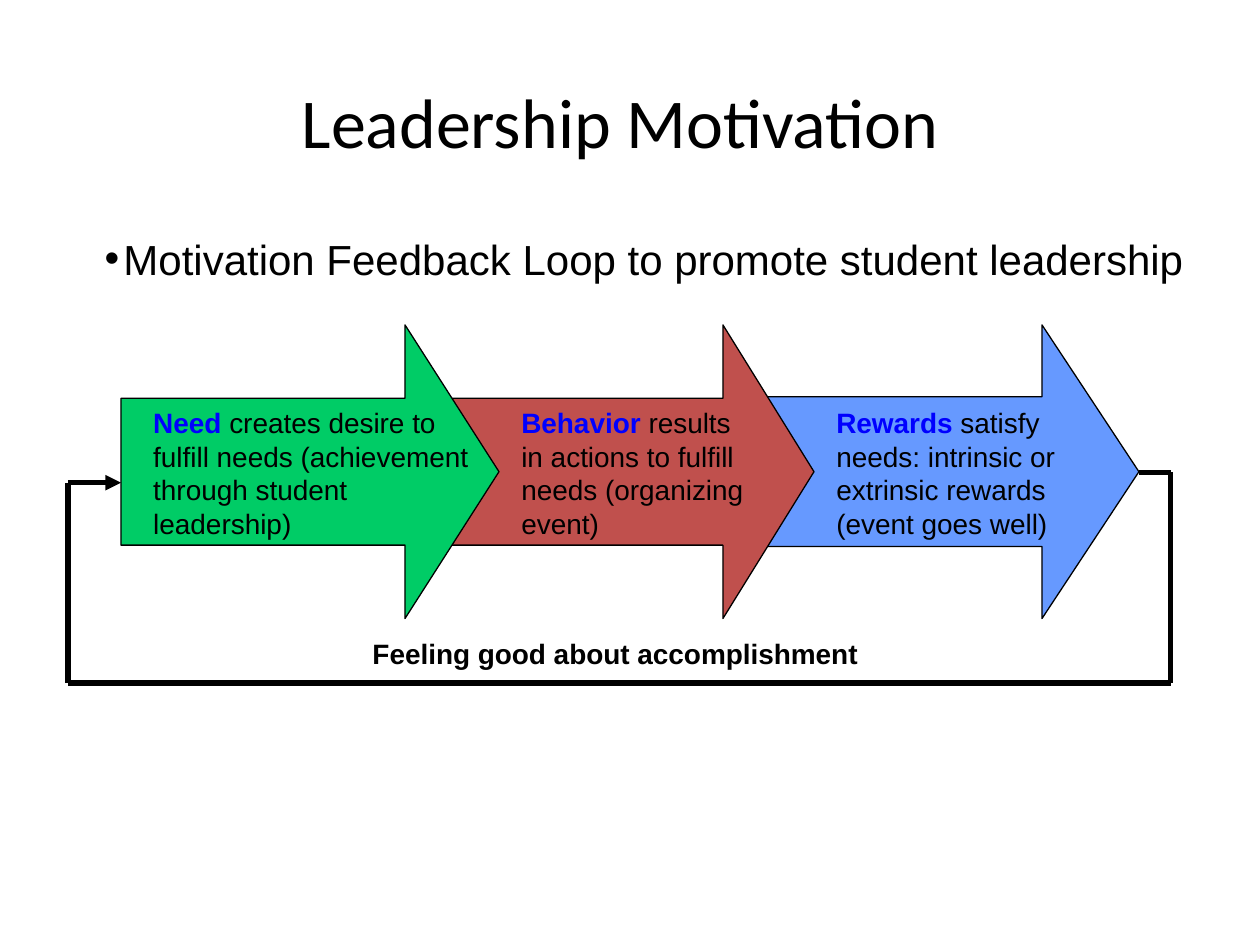
from collections import namedtuple
from lxml.etree import SubElement as Sub
from pptx import Presentation
from pptx.dml.color import RGBColor as RGB
from pptx.enum.shapes import MSO_CONNECTOR as Link, MSO_SHAPE as Shape
from pptx.enum.text import MSO_ANCHOR as Anchor, MSO_AUTO_SIZE as Fit, PP_ALIGN as Align
from pptx.oxml.ns import qn
from pptx.util import Cm, Pt

Theme = namedtuple("Theme", "ink key green red blue head lead body sans title")
theme = Theme("000000", "0000FF", "00CC66", "C0504D", "6699FF", 40, 24, 16, "Arial", "Calibri")

deck = Presentation()
deck.slide_width, deck.slide_height = Cm(25.4), Cm(19.05)
slide = deck.slides.add_slide(deck.slide_layouts[6])
shapes = slide.shapes


def add_box(left, top, width, height, wrap=True):
    frame = shapes.add_textbox(Cm(left), Cm(top), Cm(width), Cm(height)).text_frame
    frame.word_wrap = wrap
    return frame


def add_run(para, text, size, color=theme.ink, bold=False, face=theme.sans):
    run = para.add_run()
    run.text = text
    run.font.name, run.font.size, run.font.bold = face, Pt(size), bold
    run.font.color.rgb = RGB.from_string(color)


frame = add_box(1.27, 4.45, 22.86, 12.57)
frame.margin_top = frame.margin_bottom = Cm(0.25)
para = frame.paragraphs[0]
props = para._p.get_or_add_pPr()
props.set("marL", str(Cm(0.97)))
props.set("indent", str(Cm(-0.38)))
Sub(Sub(props, qn("a:buClr")), qn("a:srgbClr")).set("val", theme.ink)
Sub(props, qn("a:buFont")).set("typeface", theme.sans)
Sub(props, qn("a:buChar")).set("char", "•")
add_run(para, "Motivation Feedback Loop to promote student leadership", theme.lead)

arrows = [
    (15.14, 7.82, 0.51, 0.33, theme.blue),
    (8.99, 7.42, 0.5, 0.31, theme.red),
    (2.44, 7.62, 0.5, 0.32, theme.green),
]
for left, width, shaft, point, color in arrows:
    arrow = shapes.add_shape(Shape.RIGHT_ARROW, Cm(left), Cm(6.55), Cm(width), Cm(5.92))
    arrow.adjustments[0], arrow.adjustments[1] = shaft, point
    arrow.shadow.inherit = False
    arrow.fill.solid()
    arrow.fill.fore_color.rgb = RGB.from_string(color)
    arrow.line.color.rgb = RGB.from_string(theme.ink)
    arrow.line.width = Pt(0.75)

steps = [
    (2.84, 6.98, "Need", " creates desire to fulfill needs (achievement through student leadership)"),
    (10.26, 5.08, "Behavior", " results in actions to fulfill needs (organizing event)"),
    (16.61, 5.08, "Rewards", " satisfy needs: intrinsic or extrinsic rewards (event goes well)"),
]
for left, width, key, rest in steps:
    frame = add_box(left, 8.05, width, 3)
    frame.auto_size = Fit.SHAPE_TO_FIT_TEXT
    para = frame.paragraphs[0]
    add_run(para, key, theme.body, theme.key, True)
    add_run(para, rest, theme.body)

west, east, base, entry, exit_y = 1.37, 23.6, 13.77, 9.73, 9.52
start, end = 2.44, 22.96
loop = [
    (west, base, east, base, False),
    (west, base, west, entry, False),
    (west, entry, start, entry, True),
    (east, base, east, exit_y, False),
    (east, exit_y, end, exit_y, False),
]
for x1, y1, x2, y2, tip in loop:
    line = shapes.add_connector(Link.STRAIGHT, Cm(x1), Cm(y1), Cm(x2), Cm(y2))
    line.line.color.rgb = RGB.from_string(theme.ink)
    line.line.width = Pt(3)
    if tip:
        Sub(line.line._get_or_add_ln(), qn("a:tailEnd")).set("type", "triangle")
    Sub(line._element.spPr, qn("a:effectLst"))

frame = add_box(1.07, 0.84, 22.86, 3.18)
frame.vertical_anchor = Anchor.MIDDLE
para = frame.paragraphs[0]
para.alignment = Align.CENTER
add_run(para, "Leadership Motivation", theme.head, face=theme.title)

frame = add_box(7.26, 12.7, 10.41, 0.94, False)
frame.auto_size = Fit.SHAPE_TO_FIT_TEXT
add_run(frame.paragraphs[0], "Feeling good about accomplishment", theme.body, bold=True)

deck.save("out.pptx")
